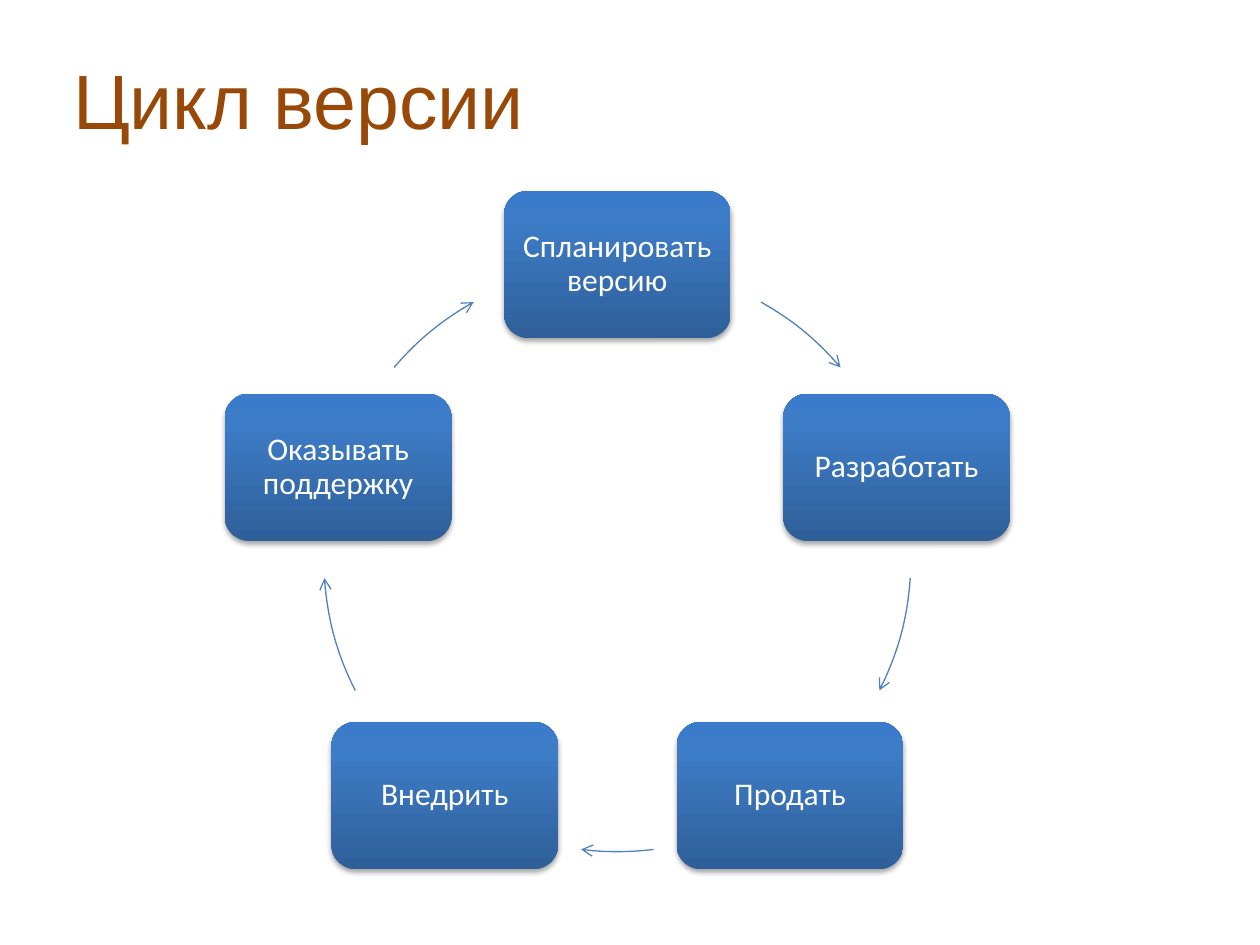
from copy import deepcopy
from dataclasses import dataclass
from math import cos, radians, sin

from lxml.etree import SubElement
from pptx import Presentation
from pptx.dml.color import RGBColor
from pptx.enum.shapes import MSO_SHAPE as Preset
from pptx.enum.text import MSO_ANCHOR as Anchor, PP_ALIGN as Align
from pptx.oxml.ns import qn
from pptx.util import Inches, Pt

COLUMNS, ROWS = 100, 75
SLIDE_WIDTH, SLIDE_HEIGHT = Inches(10), Inches(7.5)


@dataclass(frozen=True)
class Theme:
    title_color: str = "984807"
    box_text: str = "FFFFFF"
    arrow: str = "4F81BD"
    shadow: str = "000000"
    gradient: tuple = ((0, "2F5F99"), (0.8, "3D7CC7"), (1, "3A7CCB"))
    title_font: str = "Arial"
    box_font: str = "Calibri"
    title_size: int = 44
    box_size: int = 18
    arrow_width: float = 0.75


@dataclass(frozen=True)
class Cycle:
    center_column: float = 49
    center_row: float = 44.3
    radius: float = 23.3
    box_columns: float = 18
    box_rows: float = 11.7


@dataclass(frozen=True)
class Step:
    label: str
    arrow_start: float
    arrow_end: float


THEME = Theme()
CYCLE = Cycle()
STEPS = (
    Step("Спланировать версию", 29.3, 49.5),
    Step("Разработать", 93.9, 116.8),
    Step("Продать", 172.9, 187.1),
    Step("Внедрить", 243.2, 266.1),
    Step("Оказывать поддержку", 310.5, 330.7),
)


def column(count: float) -> int:
    return round(SLIDE_WIDTH * count / COLUMNS)


def row(count: float) -> int:
    return round(SLIDE_HEIGHT * count / ROWS)


def grid_box(left: float, top: float, width: float, height: float) -> tuple:
    return column(left), row(top), column(width), row(height)


def write_text(shape, text: str, *, font: str, size: float, color: str,
               align=Align.LEFT, anchor=Anchor.MIDDLE, spacing: float = 1,
               margins: tuple = (0.7, 0.7, 0.7, 0.7)) -> None:
    frame = shape.text_frame
    frame.word_wrap = True
    frame.vertical_anchor = anchor
    frame.margin_left, frame.margin_right = column(margins[0]), column(margins[2])
    frame.margin_top, frame.margin_bottom = row(margins[1]), row(margins[3])
    paragraph = frame.paragraphs[0]
    paragraph.alignment = align
    paragraph.line_spacing = spacing
    run = paragraph.add_run()
    run.text = text
    run.font.name = font
    run.font.size = Pt(size)
    run.font.color.rgb = RGBColor.from_string(color)


def fill_gradient(shape, stops: tuple) -> None:
    shape.fill.gradient()
    shape.fill.gradient_angle = 90
    stop_list = shape.element.spPr.find(".//" + qn("a:gsLst"))
    while len(stop_list) < len(stops):
        stop_list.append(deepcopy(stop_list[-1]))
    for stop, (position, color) in zip(shape.fill.gradient_stops, stops):
        stop.position = position
        stop.color.rgb = RGBColor.from_string(color)


def add_shadow(shape) -> None:
    shape.shadow.inherit = False
    effects = shape.element.spPr.find(qn("a:effectLst"))
    shadow = SubElement(effects, qn("a:outerShdw"), blurRad=str(Pt(3.1)),
                        dist=str(Pt(1.8)), dir="5400000", rotWithShape="0")
    color = SubElement(shadow, qn("a:srgbClr"), val=THEME.shadow)
    SubElement(color, qn("a:alpha"), val="35000")


def add_step_box(slide, step: Step, angle: float) -> None:
    center_column = CYCLE.center_column + CYCLE.radius * sin(radians(angle))
    center_row = CYCLE.center_row - CYCLE.radius * cos(radians(angle))
    shape = slide.shapes.add_shape(Preset.ROUNDED_RECTANGLE, *grid_box(
        center_column - CYCLE.box_columns / 2, center_row - CYCLE.box_rows / 2,
        CYCLE.box_columns, CYCLE.box_rows))
    fill_gradient(shape, THEME.gradient)
    shape.line.fill.background()
    add_shadow(shape)
    write_text(shape, step.label, font=THEME.box_font, size=THEME.box_size,
               color=THEME.box_text, align=Align.CENTER, spacing=0.9)


def add_arc_arrow(slide, step: Step) -> None:
    diameter = 2 * CYCLE.radius
    arc = slide.shapes.add_shape(Preset.ARC, *grid_box(
        CYCLE.center_column - CYCLE.radius, CYCLE.center_row - CYCLE.radius,
        diameter, diameter))
    for index, angle in enumerate((step.arrow_start, step.arrow_end)):
        arc.adjustments[index] = (angle - 90) % 360 * 0.6
    arc.fill.background()
    arc.line.color.rgb = RGBColor.from_string(THEME.arrow)
    arc.line.width = Pt(THEME.arrow_width)
    arc.shadow.inherit = False
    SubElement(arc.element.spPr.find(qn("a:ln")), qn("a:tailEnd"), type="arrow")


def add_title(slide, text: str) -> None:
    title = slide.shapes.title
    title.left, title.top, title.width, title.height = grid_box(5, 3, 90, 12.5)
    write_text(title, text, font=THEME.title_font, size=THEME.title_size,
               color=THEME.title_color, anchor=Anchor.TOP,
               margins=(0.8, 1.2, 1, 0.5))


def main() -> None:
    presentation = Presentation()
    presentation.slide_width, presentation.slide_height = SLIDE_WIDTH, SLIDE_HEIGHT
    slide = presentation.slides.add_slide(
        presentation.slide_layouts.get_by_name("Title Only"))
    add_title(slide, "Цикл версии")
    for index, step in enumerate(STEPS):
        add_step_box(slide, step, index * 360 / len(STEPS))
        add_arc_arrow(slide, step)
    presentation.save("out.pptx")


if __name__ == "__main__":
    main()
